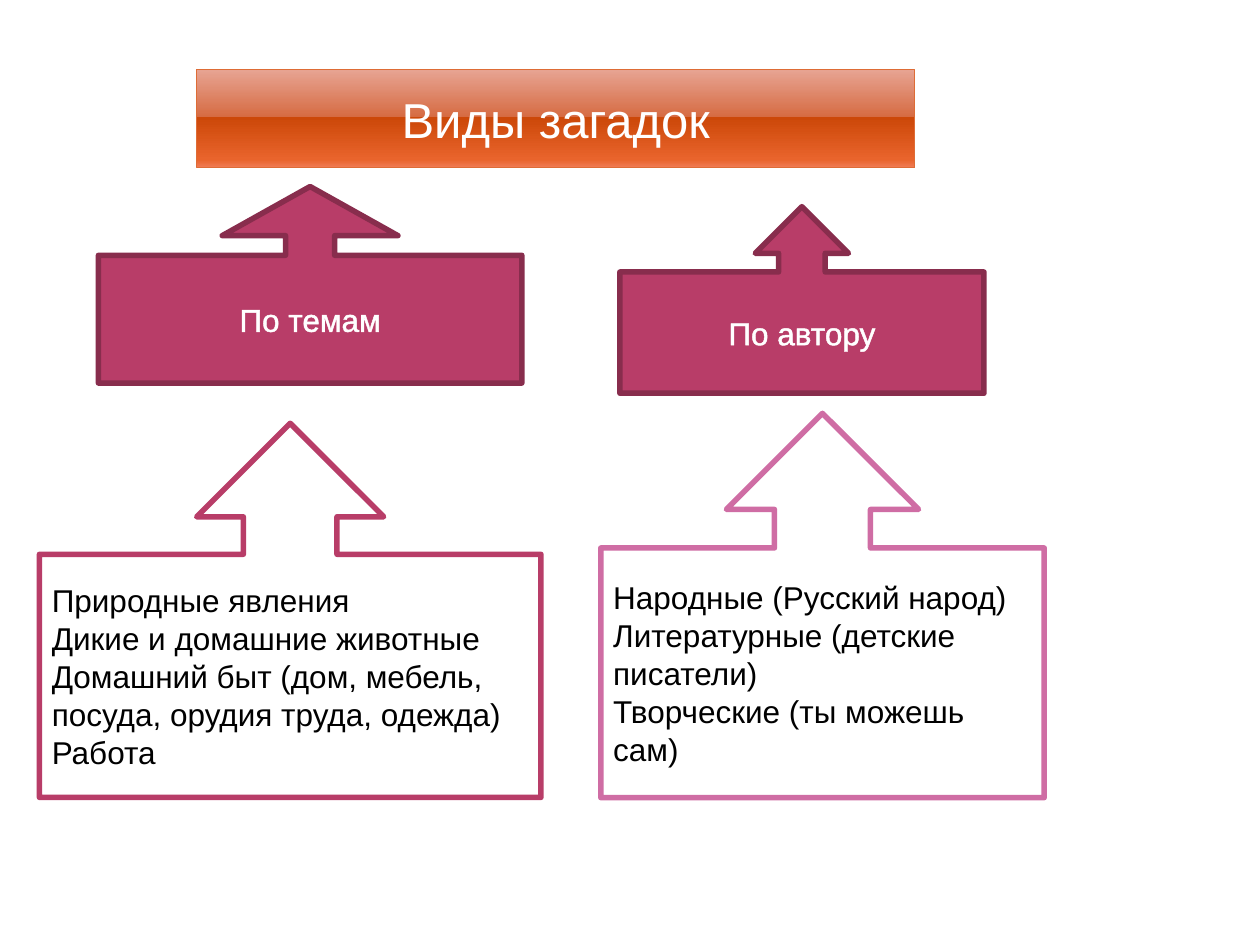
import pptx
import pptx.util
import pptx.dml.color
import pptx.enum.shapes
import pptx.enum.text
import pptx.oxml

Pt = pptx.util.Pt
RGB = pptx.dml.color.RGBColor
ALIGN = pptx.enum.text.PP_ALIGN
WHITE = RGB(0xFF, 0xFF, 0xFF)
BLACK = RGB(0, 0, 0)
BERRY = RGB(0xB8, 0x3D, 0x68)
DARK_BERRY = RGB(0x88, 0x2D, 0x4D)
PINK = RGB(0xCF, 0x6D, 0xA4)
ORANGE = RGB(0xDE, 0x6C, 0x36)
NAMESPACE = 'xmlns:a="http://schemas.openxmlformats.org/drawingml/2006/main"'

# Content: places are left, top, width, height in points
TITLE = "Виды загадок"
TITLE_PLACE = (112.3, 39.6, 410.4, 56.2)
TITLE_STOPS = [(0, "E7A493"), (49, "D66B42"), (49, "CC4809"),
               (92, "E9642C"), (100, "F07B55")]
HEADING = {"fill": BERRY, "line": DARK_BERRY, "font": WHITE,
           "align": ALIGN.CENTER, "outlined": True}
LIST = {"fill": WHITE, "line": BERRY, "font": BLACK,
        "align": ALIGN.LEFT, "outlined": False}
CALLOUTS = [
    {"place": (56.2, 106.6, 242, 112.3), "head": 0.447, "style": HEADING,
     "lines": ["По темам"]},
    {"place": (354.2, 118.1, 208.1, 106.6), "head": 0.25, "style": HEADING,
     "lines": ["По автору"]},
    {"place": (22.5, 241.9, 286.6, 213.8), "head": 0.25, "style": LIST,
     "lines": ["Природные явления",
               "Дикие и домашние животные",
               "Домашний быт (дом, мебель,",
               "посуда, орудия труда, одежда)",
               "Работа"]},
    {"place": (343.3, 236.2, 253.4, 219.6), "head": 0.25,
     "style": {**LIST, "line": PINK},
     "lines": ["Народные (Русский народ)",
               "Литературные (детские писатели)",
               "Творческие (ты можешь сам)"]},
]


def write_lines(shape, lines, size, color, align):
    frame = shape.text_frame
    frame.text = "\n".join(lines)
    frame.word_wrap = True
    frame.auto_size = pptx.enum.text.MSO_AUTO_SIZE.NONE
    frame.vertical_anchor = pptx.enum.text.MSO_ANCHOR.MIDDLE
    for para in frame.paragraphs:
        para.alignment = align
        for span in para.runs:
            for name, value in {"name": "Arial", "size": Pt(size)}.items():
                setattr(span.font, name, value)
            span.font.color.rgb = color


def set_line(shape, color, width):
    shape.line.color.rgb = color
    shape.line.width = Pt(width)


def outline_text(shape, color, width):
    for para in shape.text_frame.paragraphs:
        for span in para.runs:
            span.font._element.insert(0, pptx.oxml.parse_xml(
                f'<a:ln {NAMESPACE} w="{Pt(width)}"><a:solidFill>'
                f'<a:srgbClr val="{color}"/></a:solidFill></a:ln>'))


def add_title(page):
    title = page.shapes.title
    for name, value in zip(("left", "top", "width", "height"), TITLE_PLACE):
        setattr(title, name, Pt(value))
    # Rounded outline and glossy vertical gradient
    stops = "".join(f'<a:gs pos="{position * 1000}"><a:srgbClr val="{color}"/></a:gs>'
                    for position, color in TITLE_STOPS)
    for markup in (
            f'<a:prstGeom {NAMESPACE} prst="roundRect"><a:avLst/></a:prstGeom>',
            f'<a:gradFill {NAMESPACE} rotWithShape="1"><a:gsLst>{stops}</a:gsLst>'
            '<a:lin ang="5400000" scaled="0"/></a:gradFill>'):
        title._element.spPr.append(pptx.oxml.parse_xml(markup))
    set_line(title, ORANGE, 0.9)
    write_lines(title, [TITLE], 28, WHITE, ALIGN.CENTER)


def add_callout(page, place, head, style, lines):
    box = page.shapes.add_shape(pptx.enum.shapes.MSO_SHAPE.UP_ARROW_CALLOUT,
                                *map(Pt, place))
    box.adjustments[1] = head
    box.shadow.inherit = False
    box.fill.solid()
    box.fill.fore_color.rgb = style["fill"]
    set_line(box, style["line"], 3.15)
    write_lines(box, lines, 18, style["font"], style["align"])
    if style["outlined"]:
        outline_text(box, style["font"], 1.45)


def main():
    deck = pptx.Presentation()
    deck.slide_width, deck.slide_height = Pt(720), Pt(540)
    page = deck.slides.add_slide(deck.slide_layouts.get_by_name("Title Only"))
    add_title(page)
    for callout in CALLOUTS:
        add_callout(page, **callout)
    deck.save("out.pptx")


if __name__ == "__main__":
    main()
